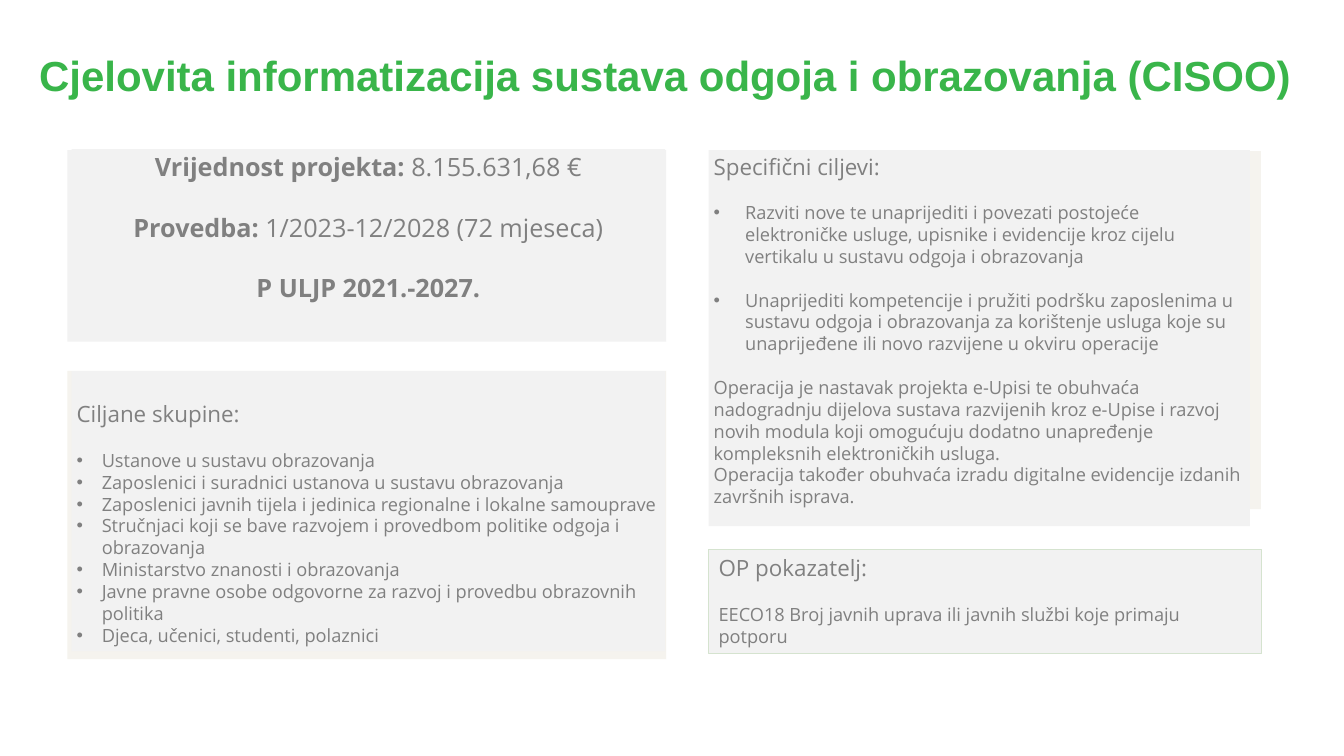
import pptx
import pptx.util
import pptx.dml.color
import pptx.enum.shapes
import pptx.enum.text
import pptx.oxml
import pptx.oxml.ns

Pt = pptx.util.Pt
ALIGN = pptx.enum.text.PP_ALIGN
GREEN, GREY, PALE, CREAM, EDGE = "39B54A", "808080", "F2F2F2", "F5F3EE", "D5E3CF"
HEAD, BODY, BIG = 16, 13, 18
LINE = 1.2  # height of a text line relative to its size


def tint(code):
    return pptx.dml.color.RGBColor.from_string(code)


def panel(slide, box, fill, edge=None):
    """Flat rectangle, with an outline if edge is given."""
    shape = slide.shapes.add_shape(
        pptx.enum.shapes.MSO_SHAPE.RECTANGLE, *map(Pt, box))
    shape.shadow.inherit = False
    shape.fill.solid()
    shape.fill.fore_color.rgb = tint(fill)
    if edge:
        shape.line.color.rgb = tint(edge)
        shape.line.width = Pt(0.75)
    else:
        shape.line.fill.background()
    return shape


def setup(shape, side=3.6, top=1.8):
    """Prepare a text frame that starts at the top of its shape."""
    frame = shape.text_frame
    frame.word_wrap = True
    frame.vertical_anchor = pptx.enum.text.MSO_ANCHOR.TOP
    frame.margin_left = frame.margin_right = Pt(side)
    frame.margin_top, frame.margin_bottom = Pt(top), Pt(1.8)
    return frame


def write(frame, runs, size, first=False, gap=0, align=ALIGN.LEFT,
          color=GREY, font="Open Sans", indent=0):
    """Add a paragraph of (text, bold) runs; an indent brings a bullet."""
    para = frame.paragraphs[0] if first else frame.add_paragraph()
    para.alignment = align
    para.space_before = Pt(gap)
    for text, bold in runs:
        run = para.add_run()
        run.text = text
        run.font.name, run.font.size, run.font.bold = font, Pt(size), bold
        run.font.color.rgb = tint(color)
    if indent:
        props = para._p.get_or_add_pPr()
        props.set("marL", str(Pt(indent)))
        props.set("indent", str(-Pt(indent)))
        for tag, key, value in (("buFont", "typeface", "Arial"),
                                ("buChar", "char", "•")):
            item = pptx.oxml.parse_xml(
                f'<a:{tag} {pptx.oxml.ns.nsdecls("a")} {key}="{value}"/>')
            props.append(item)
    return para


def title(slide, box, text):
    frame = setup(slide.shapes.add_textbox(*map(Pt, box)))
    para = write(frame, [(text, True)], 30, first=True, align=ALIGN.CENTER,
                 color=GREEN, font="Arial")
    para.line_spacing = 0.9


def facts(slide, box, rows):
    """Centred key facts, one blank line's height apart."""
    x, y, w, h = box
    panel(slide, (x, y + 0.7, w, h), PALE)
    frame = setup(panel(slide, (x + 2.9, y, w - 3.6, h), PALE))
    for i, runs in enumerate(rows):
        write(frame, runs, BIG, first=i == 0, gap=BIG * LINE if i else 0,
              align=ALIGN.CENTER)


def groups(slide, box, head, items):
    """Heading one line down, then a tight bullet list."""
    x, y, w, h = box
    panel(slide, box, CREAM)
    frame = setup(panel(slide, (x + 2.9, y, w - 3.6, h - 5.8), PALE),
                  top=1.8 + HEAD * LINE)
    write(frame, [(head, False)], HEAD, first=True)
    for i, text in enumerate(items):
        write(frame, [(text, False)], BODY, gap=0 if i else BODY * LINE,
              indent=18)


def goals(slide, box, head, items, notes):
    """Heading, spaced bullets, then closing paragraphs."""
    x, y, w, h = box
    panel(slide, (x + 0.7, y + 0.7, w, h - 13), CREAM)
    frame = setup(panel(slide, (x, y, w - 7.2, h), PALE))
    write(frame, [(head, False)], HEAD, first=True)
    for text in items:
        write(frame, [(text, False)], BODY, gap=BODY * LINE, indent=22.5)
    for i, text in enumerate(notes):
        write(frame, [(text, False)], BODY, gap=0 if i else BODY * LINE)


def metric(slide, box, head, text):
    frame = setup(panel(slide, box, PALE, EDGE), side=7.2, top=3.6)
    write(frame, [(head, False)], HEAD, first=True)
    write(frame, [(text, False)], BODY, gap=BODY * LINE)


def main():
    deck = pptx.Presentation()
    deck.slide_width, deck.slide_height = Pt(960), Pt(540)
    slide = deck.slides.add_slide(deck.slide_layouts[6])
    left, right = 48.2, 506.2

    title(slide, (22.3, 37.4, 906.5, 62.6),
          "Cjelovita informatizacija sustava odgoja i obrazovanja (CISOO)")
    # Left column
    facts(slide, (left, 106.6, 427.7, 136.8), [
        [("Vrijednost projekta:", True), (" 8.155.631,68 €", False)],
        [("Provedba:", True), (" 1/2023-12/2028 (72 mjeseca)", False)],
        [("P ULJP 2021.-2027.", True)],
    ])
    groups(slide, (left, 265, 427.7, 205.9), "Ciljane skupine:", [
        "Ustanove u sustavu obrazovanja",
        "Zaposlenici i suradnici ustanova u sustavu obrazovanja",
        "Zaposlenici javnih tijela i jedinica regionalne i lokalne samouprave",
        "Stručnjaci koji se bave razvojem i provedbom politike odgoja i "
        "obrazovanja",
        "Ministarstvo znanosti i obrazovanja",
        "Javne pravne osobe odgovorne za razvoj i provedbu obrazovnih politika",
        "Djeca, učenici, studenti, polaznici",
    ])
    # Right column
    goals(slide, (right, 107.3, 393.8, 268.6), "Specifični ciljevi:", [
        "Razviti nove te unaprijediti i povezati postojeće elektroničke "
        "usluge, upisnike i evidencije kroz cijelu vertikalu u sustavu "
        "odgoja i obrazovanja",
        "Unaprijediti kompetencije i pružiti podršku zaposlenima u sustavu "
        "odgoja i obrazovanja za korištenje usluga koje su unaprijeđene ili "
        "novo razvijene u okviru operacije",
    ], [
        "Operacija je nastavak projekta e-Upisi te obuhvaća nadogradnju "
        "dijelova sustava razvijenih kroz e-Upise i razvoj novih modula koji "
        "omogućuju dodatno unapređenje kompleksnih elektroničkih usluga.",
        "Operacija također obuhvaća izradu digitalne evidencije izdanih "
        "završnih isprava.",
    ])
    metric(slide, (right, 392.4, 394.6, 74.2), "OP pokazatelj:",
           "EECO18 Broj javnih uprava ili javnih službi koje primaju potporu")
    deck.save("out.pptx")


if __name__ == "__main__":
    main()
